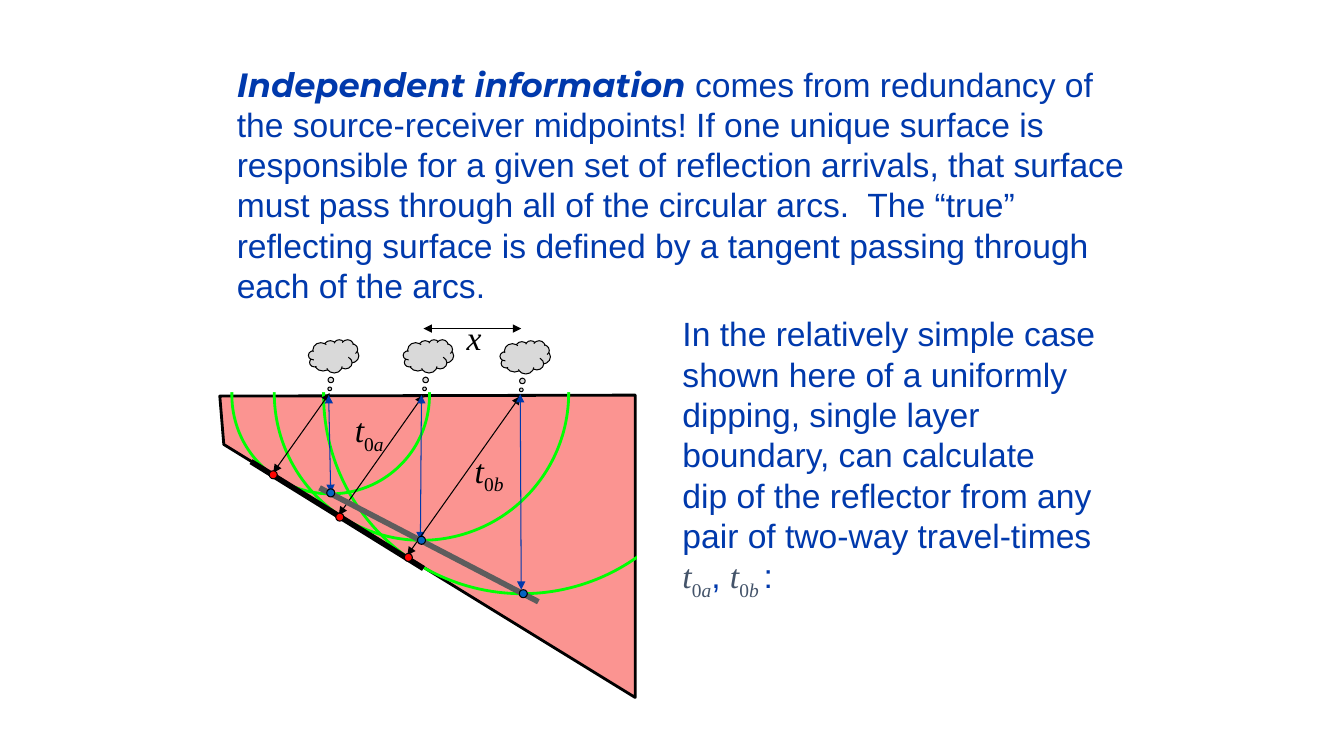
from lxml.etree import SubElement
from pptx import Presentation
from pptx.dml.color import RGBColor
from pptx.enum.shapes import MSO_CONNECTOR, MSO_SHAPE as SHAPE
from pptx.enum.text import MSO_AUTO_SIZE
from pptx.oxml.ns import qn
from pptx.util import Inches, Pt

BLUE, BLACK, WHITE, SLATE = "0039AC", "000000", "FFFFFF", "44546A"
ROCK, ARC_GREEN, CLOUD_GREY, DIP_GREY = "FB9491", "00FF02", "D9D9D9", "5D5D5D"
APPARENT_BLUE, TRUE_RED = "0563C1", "FF0501"
SANS, SERIF = "Arial", "Times New Roman"

INFORMATION = [
    "the source-receiver midpoints! If one unique surface is",
    "responsible for a given set of reflection arrivals, that surface",
    "must pass through all of the circular arcs.  The “true”",
    "reflecting surface is defined by a tangent passing through",
    "each of the arcs.",
]
SIMPLE_CASE = [
    "In the relatively simple case",
    "shown here of a uniformly",
    "dipping, single layer",
    "boundary, can calculate",
    "dip of the reflector from any",
    "pair of two-way travel-times",
]
LAYER = [(2.18, 3.93), (6.3, 3.92), (6.3, 6.92), (2.22, 4.41)]
# Arc centre x, y and radius
ARCS = [(4.18, 3.9, 1.46), (5.18, 3.92, 1.97), (3.28, 3.92, 0.98)]
# Cloud corner, then true ray and vertical ray, each from reflector to surface
SHOTS = [
    ((4, 3.37), ((3.36, 5.11), (4.2, 3.92)), ((4.17, 5.36), (4.18, 3.92))),
    ((4.96, 3.38), ((4.04, 5.51), (5.16, 3.93)), ((5.17, 5.85), (5.16, 3.91))),
    ((3.06, 3.37), ((2.71, 4.69), (3.27, 3.9)), ((3.28, 4.89), (3.26, 3.92))),
]
APPARENT_POINTS = [(4.18, 5.36), (5.19, 5.89), (3.28, 4.89)]
TRUE_POINTS = [(3.37, 5.13), (4.05, 5.53), (2.71, 4.71)]
POINT_RADIUS = 0.04


def rgb(color):
    return RGBColor.from_string(color)


def paint(shape, fill=None, line=None, width=0.75):
    shape.shadow.inherit = False
    if fill:
        shape.fill.solid()
        shape.fill.fore_color.rgb = rgb(fill)
    else:
        shape.fill.background()
    if line:
        shape.line.color.rgb = rgb(line)
        shape.line.width = Pt(width)
    else:
        shape.line.fill.background()


def add_preset(slide, kind, box, **style):
    shape = slide.shapes.add_shape(kind, *map(Inches, box))
    paint(shape, **style)
    return shape


def add_circle(slide, x, y, radius, **style):
    box = (x - radius, y - radius, 2 * radius, 2 * radius)
    add_preset(slide, SHAPE.OVAL, box, **style)


def add_cloud(slide, x, y):
    cloud = add_preset(slide, SHAPE.CLOUD_CALLOUT, (x, y, 0.5, 0.33),
                       fill=CLOUD_GREY, line=BLACK)
    cloud.adjustments[0] = -0.094
    cloud.adjustments[1] = 1.193


def add_layer(slide):
    corners = [(Inches(x), Inches(y)) for x, y in LAYER]
    builder = slide.shapes.build_freeform(*corners[0])
    builder.add_line_segments(corners[1:], close=True)
    paint(builder.convert_to_shape(), ROCK, BLACK, 2)


def add_line(slide, start, end, color=BLACK, width=0.75, arrows=False):
    line = slide.shapes.add_connector(
        MSO_CONNECTOR.STRAIGHT, *map(Inches, (*start, *end)))
    line.line.color.rgb = rgb(color)
    line.line.width = Pt(width)
    if arrows:
        outline = line.line._get_or_add_ln()
        for tip in ("a:headEnd", "a:tailEnd"):
            SubElement(outline, qn(tip), type="triangle")
    SubElement(line._element.spPr, qn("a:effectLst"))


def set_font(font, name=SANS, color=BLUE, italic=False, bold=False):
    font.name, font.size = name, Pt(24)
    font.italic, font.bold = italic, bold
    font.color.rgb = rgb(color)


def add_run(paragraph, text, subscript=False, **style):
    run = paragraph.add_run()
    run.text = text
    set_font(run.font, **style)
    if subscript:
        run._r.get_or_add_rPr().set("baseline", "-25000")


def add_travel_time(paragraph, index, color):
    add_run(paragraph, "t", name=SERIF, color=color, italic=True)
    add_run(paragraph, "0", subscript=True, name=SERIF, color=color)
    add_run(paragraph, index, subscript=True, name=SERIF, color=color, italic=True)


def add_text(slide, box):
    frame = slide.shapes.add_textbox(*map(Inches, box)).text_frame
    frame.word_wrap = False
    frame.auto_size = MSO_AUTO_SIZE.SHAPE_TO_FIT_TEXT
    return frame


def add_plain_line(paragraph, text, **style):
    paragraph.text = text
    set_font(paragraph.font, **style)


def add_information(slide):
    frame = add_text(slide, (2.25, 0.58, 9.39, 2.52))
    opening = frame.paragraphs[0]
    add_run(opening, "Independent information ", name="Montserrat",
            italic=True, bold=True)
    add_run(opening, "comes from redundancy of")
    for text in INFORMATION:
        add_plain_line(frame.add_paragraph(), text)


def add_simple_case(slide):
    frame = add_text(slide, (6.67, 3.06, 4.39, 2.93))
    add_plain_line(frame.paragraphs[0], SIMPLE_CASE[0])
    for text in SIMPLE_CASE[1:]:
        add_plain_line(frame.add_paragraph(), text)
    times = frame.add_paragraph()
    for index, separator in (("a", ", "), ("b ", ":")):
        add_travel_time(times, index, SLATE)
        add_run(times, separator)


def main():
    prs = Presentation()
    prs.slide_width, prs.slide_height = Inches(13.33), Inches(7.5)
    slide = prs.slides.add_slide(prs.slide_layouts[6])

    # Dipping layer, with arcs trimmed at the surface and the right edge
    add_layer(slide)
    for x, y, radius in ARCS:
        add_circle(slide, x, y, radius, line=ARC_GREEN, width=2)
    for trim in ((2.08, 1.92, 5.17, 1.97), (6.32, 3.76, 0.93, 2.06)):
        add_preset(slide, SHAPE.RECTANGLE, trim, fill=WHITE)

    add_information(slide)

    # Shots and their rays
    for cloud, true_ray, vertical_ray in SHOTS:
        add_cloud(slide, *cloud)
        add_line(slide, *true_ray, arrows=True)
        add_line(slide, *vertical_ray, color=BLUE, arrows=True)

    # Apparent and true reflectors
    for ends, color, points, fill in (
        (((3.17, 4.84), (5.34, 5.97)), DIP_GREY, APPARENT_POINTS, APPARENT_BLUE),
        (((2.49, 4.58), (4.2, 5.64)), BLACK, TRUE_POINTS, TRUE_RED),
    ):
        add_line(slide, *ends, color=color, width=4)
        for x, y in points:
            add_circle(slide, x, y, POINT_RADIUS, fill=fill, line=BLACK)

    add_simple_case(slide)

    # Travel-time and offset labels
    for x, y, index in ((4.61, 4.41, "b"), (3.42, 4.01, "a")):
        label = add_text(slide, (x, y, 0.52, 0.5))
        add_travel_time(label.paragraphs[0], index, BLACK)
    add_line(slide, (4.2, 3.26), (5.17, 3.26), arrows=True)
    offset = add_text(slide, (4.53, 3.09, 0.35, 0.5))
    add_plain_line(offset.paragraphs[0], "x", name=SERIF, color=BLACK, italic=True)

    prs.save("out.pptx")


if __name__ == "__main__":
    main()
